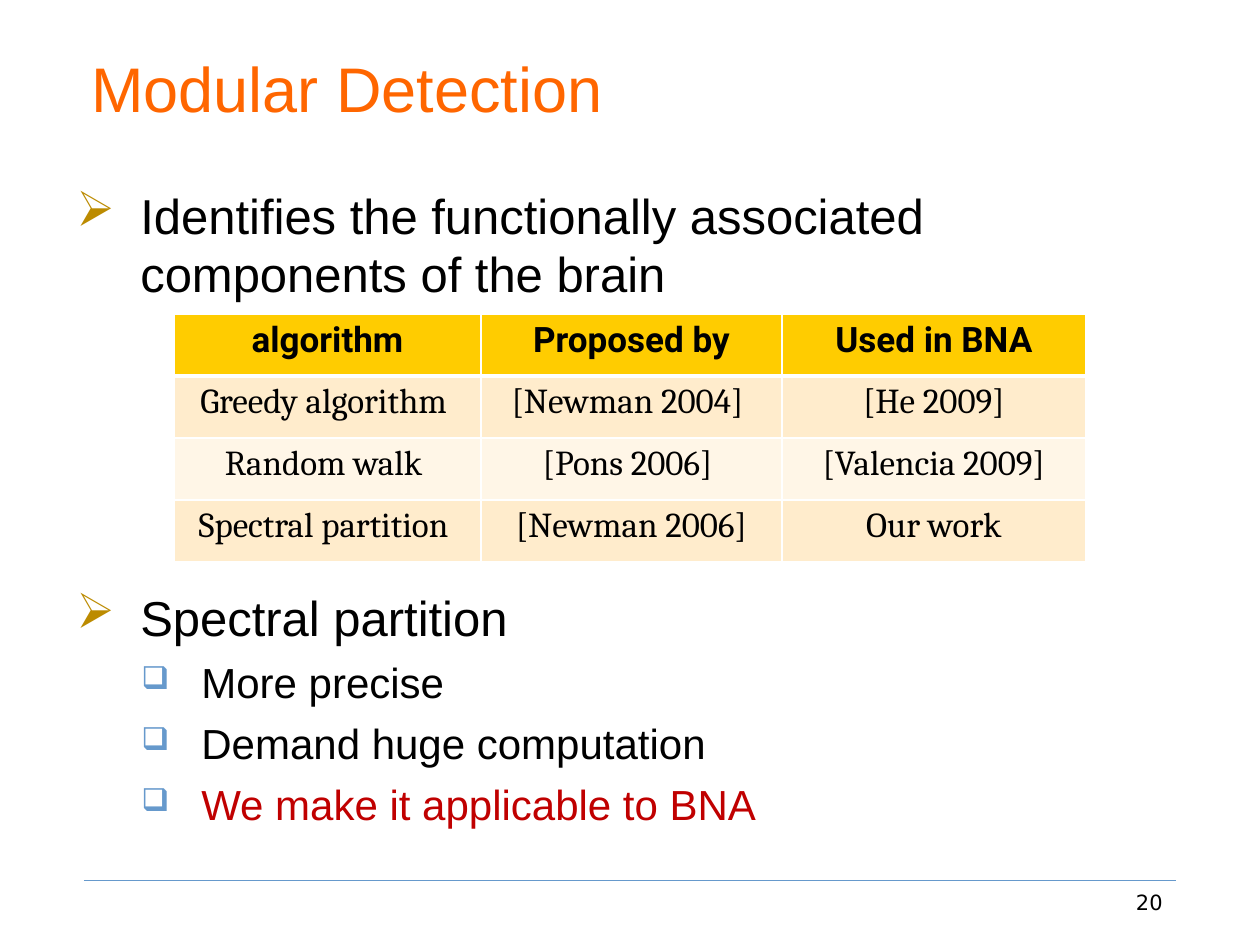
import pptx
import pptx.dml.color
import pptx.enum.shapes
import pptx.enum.text
import pptx.oxml
import pptx.oxml.ns
import pptx.util
from dataclasses import dataclass

EMU_PER_PX = 914400 / 126
ALIGN = pptx.enum.text.PP_ALIGN
ANCHOR = pptx.enum.text.MSO_ANCHOR


@dataclass(frozen=True)
class Theme:
    title: str = "FF6600"
    text: str = "000000"
    accent: str = "C00000"
    arrow: str = "BC8B00"
    box: str = "6699CC"
    rule: str = "6699CC"
    header: str = "FFCC00"
    bands: tuple = ("FFECCC", "FFF6E7")
    border: str = "FFFFFF"
    title_size: int = 36
    body_size: int = 28
    sub_size: int = 24
    table_size: int = 20
    number_size: int = 12


def px(length):
    return pptx.util.Emu(round(length * EMU_PER_PX))


def rgb(color):
    return pptx.dml.color.RGBColor.from_string(color)


def add_xml(parent, tag, body="", **attributes):
    values = "".join(f' {key}="{value}"' for key, value in attributes.items())
    namespace = pptx.oxml.ns.nsdecls("a")
    parent.append(pptx.oxml.parse_xml(f"<a:{tag} {namespace}{values}>{body}</a:{tag}>"))


def solid(color):
    return f'<a:solidFill><a:srgbClr val="{color}"/></a:solidFill>'


class SlideBuilder:
    def __init__(self, slide, theme):
        self.slide = slide
        self.theme = theme

    def styled_run(self, paragraph, text, size, color=None, font="Arial", bold=False):
        run = paragraph.add_run()
        run.text = text
        formats = {"name": font, "size": pptx.util.Pt(size), "bold": bold}
        for name, value in formats.items():
            setattr(run.font, name, value)
        run.font.color.rgb = rgb(color or self.theme.text)

    def frame(self, left, top, width, height, anchor=ANCHOR.TOP):
        shape = self.slide.shapes.add_textbox(*map(px, (left, top, width, height)))
        shape.text_frame.word_wrap = True
        shape.text_frame.vertical_anchor = anchor
        return shape.text_frame

    def text(self, box, text, size, align=ALIGN.LEFT, anchor=ANCHOR.TOP, **style):
        paragraph = self.frame(*box, anchor).paragraphs[0]
        paragraph.alignment = align
        self.styled_run(paragraph, text, size, **style)

    def bullets(self, box, items):
        """Items are (level, text, color)."""
        theme = self.theme
        levels = (
            {"indent": 64, "hanging": 64, "mark": "➢", "color": theme.arrow,
             "percent": 100, "size": theme.body_size},
            {"indent": 125, "hanging": 60, "mark": "❑", "color": theme.box,
             "percent": 75, "size": theme.sub_size},
        )
        text_frame = self.frame(*box)
        for index, (level, text, color) in enumerate(items):
            look = levels[level]
            paragraph = text_frame.add_paragraph() if index else text_frame.paragraphs[0]
            paragraph.level = level
            paragraph.space_before = pptx.util.Pt(6 if index else 0)
            properties = paragraph._p.get_or_add_pPr()
            properties.set("marL", str(px(look["indent"])))
            properties.set("indent", str(-px(look["hanging"])))
            add_xml(properties, "buClr", f'<a:srgbClr val="{look["color"]}"/>')
            add_xml(properties, "buSzPct", val=look["percent"] * 1000)
            add_xml(properties, "buChar", char=look["mark"])
            self.styled_run(paragraph, text, look["size"], color)

    def table(self, left, top, widths, row_height, rows):
        table = self.slide.shapes.add_table(
            len(rows), len(widths), px(left), px(top),
            px(sum(widths)), px(row_height * len(rows))).table
        for column, width in zip(table.columns, widths):
            column.width = px(width)
        for row_index, row in enumerate(rows):
            table.rows[row_index].height = px(row_height)
            for column_index, text in enumerate(row):
                self.cell(table.cell(row_index, column_index), text, row_index)

    def cell(self, cell, text, row_index):
        theme = self.theme
        is_header = row_index == 0
        # Borders: the heavy line lies between the header and the first row
        weights = {"lnL": 1, "lnR": 1, "lnT": 3 if row_index == 1 else 1,
                   "lnB": 3 if is_header else 1}
        properties = cell._tc.get_or_add_tcPr()
        for side, points in weights.items():
            add_xml(properties, side, solid(theme.border), w=pptx.util.Pt(points))
        cell.fill.solid()
        cell.fill.fore_color.rgb = rgb(
            theme.header if is_header else theme.bands[(row_index - 1) % 2])
        paragraph = cell.text_frame.paragraphs[0]
        paragraph.alignment = ALIGN.CENTER
        self.styled_run(paragraph, text, theme.table_size,
                        font="Roboto" if is_header else "Cambria", bold=is_header)

    def rule(self, left, right, y, points):
        connector = self.slide.shapes.add_connector(
            pptx.enum.shapes.MSO_CONNECTOR.STRAIGHT, *map(px, (left, y, right, y)))
        connector.line.color.rgb = rgb(self.theme.rule)
        connector.line.width = pptx.util.Pt(points)
        add_xml(connector._element.spPr, "effectLst")


def main():
    presentation = pptx.Presentation()
    presentation.slide_width = px(1260)
    presentation.slide_height = px(945)
    theme = Theme()
    slide = presentation.slides.add_slide(presentation.slide_layouts[6])
    builder = SlideBuilder(slide, theme)

    # Footer rule and title
    builder.rule(84, 1176, 880, 0.25)
    builder.text((79, 37, 1102, 94), "Modular Detection", theme.title_size,
                 anchor=ANCHOR.BOTTOM, color=theme.title)

    # Bulleted points above and below the table
    builder.bullets((64, 179, 1134, 130), [
        (0, "Identiﬁes the functionally associated components of the brain", theme.text),
    ])
    builder.bullets((64, 581, 1134, 260), [
        (0, "Spectral partition", theme.text),
        (1, "More precise", theme.text),
        (1, "Demand huge computation", theme.text),
        (1, "We make it applicable to BNA", theme.accent),
    ])

    # Page number
    builder.text((1096, 883, 79, 66), "20", theme.number_size,
                 align=ALIGN.RIGHT, font="DejaVu Sans")

    # Algorithms table
    builder.table(174, 314, (307, 301, 304), 62, [
        ("algorithm", "Proposed by", "Used in BNA"),
        ("Greedy algorithm ", "[Newman 2004] ", "[He 2009]"),
        ("Random walk ", "[Pons 2006] ", "[Valencia 2009]"),
        ("Spectral partition ", "[Newman 2006]", "Our work"),
    ])

    presentation.save("out.pptx")


if __name__ == "__main__":
    main()
